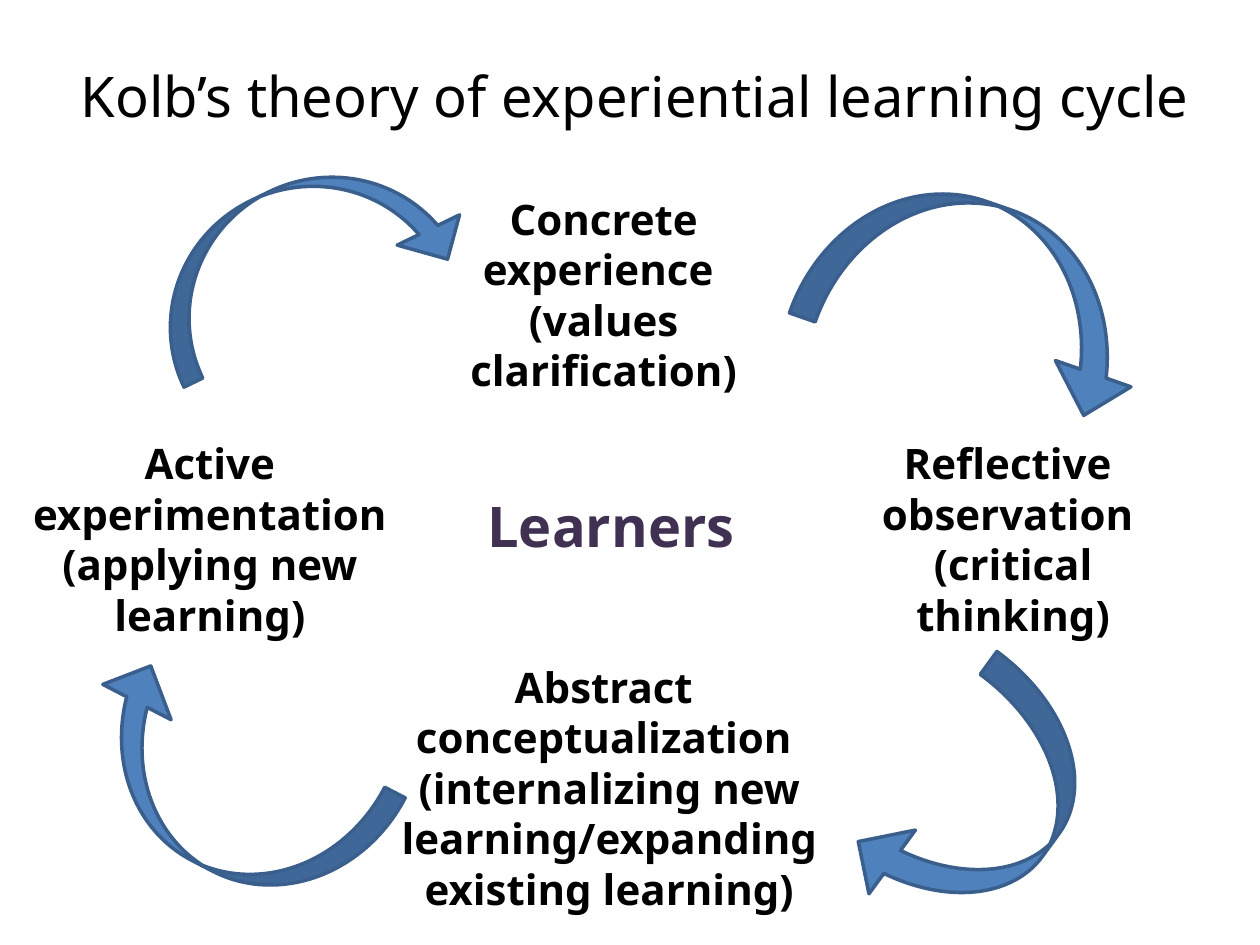
from pptx import Presentation, util as u
from pptx.dml.color import RGBColor
from pptx.enum import shapes as sh, text as tx

BLACK = RGBColor(0x00, 0x00, 0x00)
WHITE = RGBColor(0xFF, 0xFF, 0xFF)
PLUM = RGBColor(0x40, 0x31, 0x52)
BLUE = RGBColor(0x4F, 0x81, 0xBD)
NAVY = RGBColor(0x3A, 0x5F, 0x8C)


class Cycle:
    """Draws a learning cycle on a grid of 100 columns and 75 rows."""

    font = "Noto Sans"
    cols, rows = 100, 75

    def __init__(self, deck):
        self.wide = deck.slide_width / self.cols
        self.high = deck.slide_height / self.rows
        self.slide = deck.slides.add_slide(deck.slide_layouts[5])

    def box(self, col, row, wide, high):
        return [round(n) for n in (col * self.wide, row * self.high,
                                   wide * self.wide, high * self.high)]

    def words(self, shape, lines, size, color, bold):
        frame = shape.text_frame
        frame.text = "\n".join(lines)
        frame.word_wrap = True
        frame.vertical_anchor = tx.MSO_ANCHOR.MIDDLE
        for para in frame.paragraphs:
            para.alignment = tx.PP_ALIGN.CENTER
            for run in para.runs:
                run.font.name = self.font
                run.font.size = u.Pt(size)
                run.font.bold = bold
                run.font.color.rgb = color

    def title(self, place, line):
        head = self.slide.shapes.title
        head.left, head.top, head.width, head.height = self.box(*place)
        self.words(head, [line], 32, BLACK, False)

    def shape(self, kind, place, fill, line):
        item = self.slide.shapes.add_shape(kind, *self.box(*place))
        item.shadow.inherit = False
        item.fill.solid()
        item.fill.fore_color.rgb = fill
        item.line.color.rgb = line
        item.line.width = u.Pt(2)
        return item

    def label(self, place, *lines, kind=sh.MSO_SHAPE.RECTANGLE, size=24, color=BLACK):
        item = self.shape(kind, place, WHITE, WHITE)
        self.words(item, lines, size, color, True)

    def arrow(self, place, turn, thick, head=0.5):
        item = self.shape(sh.MSO_SHAPE.CURVED_LEFT_ARROW, place, BLUE, NAVY)
        item.rotation = turn
        for i, share in enumerate((thick, head, 0.25)):
            item.adjustments[i] = share


def main():
    deck = Presentation()
    deck.slide_width, deck.slide_height = u.Inches(10), u.Inches(7.5)
    page = Cycle(deck)
    page.title((2.5, 1.7, 95.8, 11.7), "Kolb’s theory of experiential learning cycle")
    page.label((32, 35, 33, 13.3), "Learners",
               kind=sh.MSO_SHAPE.OVAL, size=32, color=PLUM)
    page.label((33.3, 15, 29.2, 16.7), "Concrete experience ", "(values clarification)")
    page.arrow((71.3, 9.1, 13.5, 27.9), 289.2, 0.16, 0.47)
    page.label((67.5, 34.7, 25.8, 16.1), "Reflective ", "observation ", "(critical thinking)")
    page.arrow((71.5, 53.3, 12.5, 21.8), 36.1, 0.18)
    page.label((29.2, 52.5, 38.3, 20), "Abstract ", "conceptualization ",
               "(internalizing new learning/expanding existing learning)")
    page.label((0, 34.7, 33.3, 16.1), "Active experimentation", "(applying new learning)")
    page.arrow((11.8, 49.9, 12.2, 25.8), 117.4, 0.15)
    page.arrow((18.4, 7.1, 11, 26), 244.1, 0.15)
    deck.save("out.pptx")


if __name__ == "__main__":
    main()
